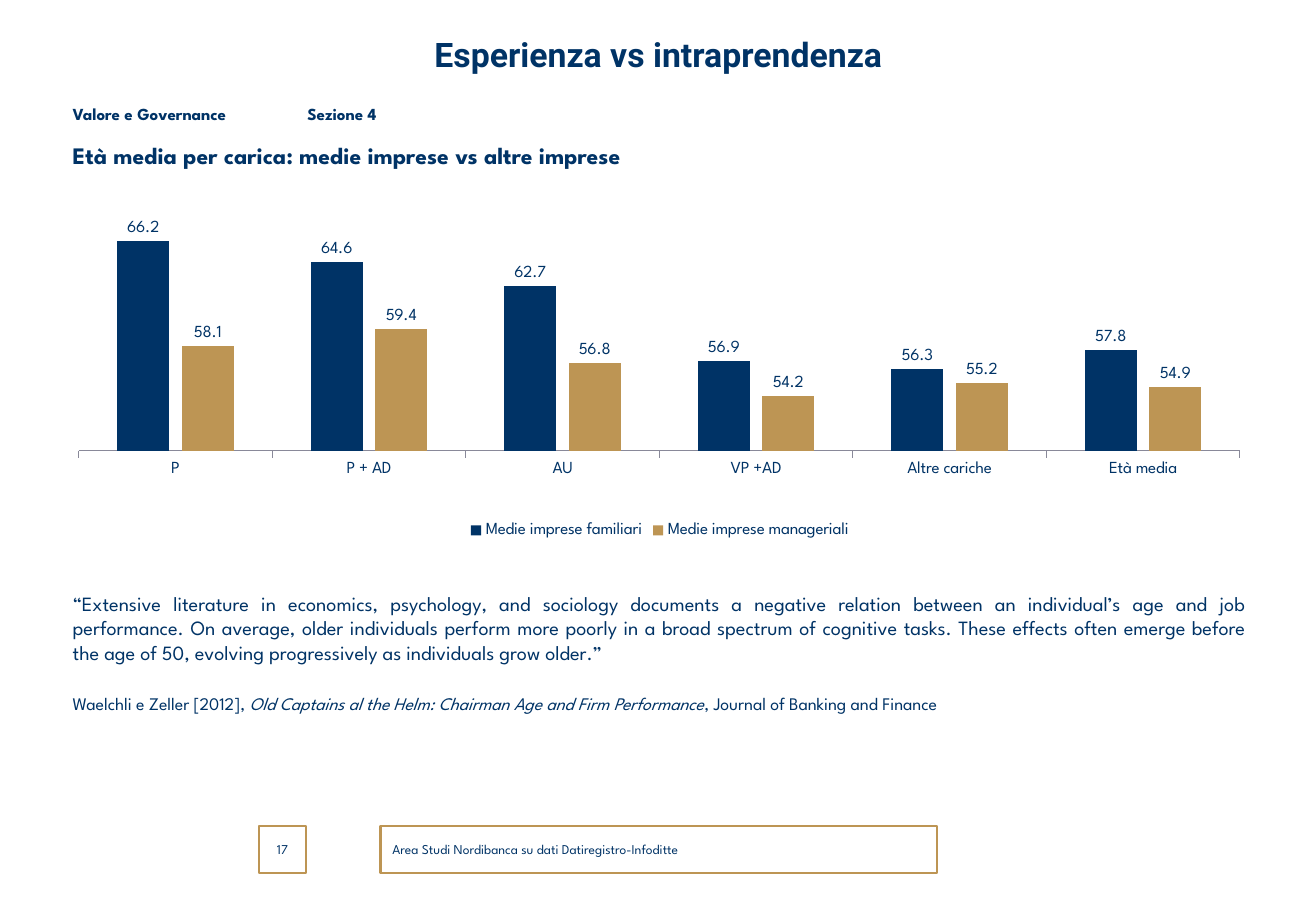
"""Build the slide comparing average age by office in family-run and managed firms."""
from lxml import etree
from pptx import Presentation
from pptx.chart.data import CategoryChartData
from pptx.dml.color import RGBColor
from pptx.enum.chart import XL_CHART_TYPE, XL_LABEL_POSITION, XL_LEGEND_POSITION, XL_TICK_LABEL_POSITION, XL_TICK_MARK
from pptx.enum.shapes import MSO_SHAPE
from pptx.enum.text import MSO_ANCHOR, PP_ALIGN
from pptx.oxml.ns import qn
from pptx.util import Pt

LEFT, CENTER, JUSTIFY = PP_ALIGN.LEFT, PP_ALIGN.CENTER, PP_ALIGN.JUSTIFY
TOP, MIDDLE = MSO_ANCHOR.TOP, MSO_ANCHOR.MIDDLE

THEME = {
    "navy": RGBColor.from_string("003366"),
    "gold": RGBColor.from_string("BD9554"),
    "axis": RGBColor.from_string("898999"),
    "heading_font": "Roboto", "body_font": "League Spartan",
    "title": 20, "subtitle": 14, "quote": 12, "citation": 10.5, "label": 10, "footer": 8,
}

TITLE = "Esperienza vs intraprendenza"
SECTION = "Valore e Governance\tSezione 4"
SUBTITLE = "Età media per carica: medie imprese vs altre imprese"
QUOTE = (
    "“Extensive literature in economics, psychology, and sociology documents a negative relation "
    "between an individual’s age and job performance. On average, older individuals perform more "
    "poorly in a broad spectrum of cognitive tasks. These effects often emerge before the age of 50, "
    "evolving progressively as individuals grow older.”"
)
CITATION = [
    ("Waelchli e Zeller [2012], ", False),
    ("Old Captains al the Helm: Chairman Age and Firm Performance", True),
    (", Journal of Banking and Finance", False),
]
PAGE_NUMBER = "17"
SOURCE_NOTE = "Area Studi Nordibanca su dati Datiregistro-Infoditte"

OFFICES = ["P", "P + AD", "AU", "VP +AD", "Altre cariche", "Età media"]
AVERAGE_AGES = [
    ("Medie imprese familiari", "navy", [66.2, 64.6, 62.7, 56.9, 56.3, 57.8]),
    ("Medie imprese manageriali", "gold", [58.1, 59.4, 56.8, 54.2, 55.2, 54.9]),
]

SLIDE_SIZE = (779.76, 540)
MARGIN = 36
HEADING_WIDTH, CONTENT_WIDTH = 708.5, 710
FOOTER_TOP, FOOTER_HEIGHT = 489.6, 28
SECTION_TAB = 139
CITATION_GAP = 17
PLOT_AREA = {"x": 0.015, "y": 0.051, "w": 0.969, "h": 0.68}


def apply(target, values):
    for name, value in values.items():
        setattr(target, name, value)


def style_font(font, size, **extra):
    apply(font, {"size": Pt(THEME[size]), "name": THEME["body_font"], **extra})
    font.color.rgb = THEME["navy"]


def write(paragraph, runs, size, align=LEFT, **extra):
    paragraph.alignment = align
    for text, italic in runs:
        run = paragraph.add_run()
        run.text = text
        style_font(run.font, size, italic=italic, **extra)


def set_frame(shape, anchor=TOP):
    apply(shape.text_frame, {"word_wrap": True, "vertical_anchor": anchor})
    return shape.text_frame.paragraphs[0]


def add_text(slide, box, anchor=TOP):
    shape = slide.shapes.add_textbox(*map(Pt, box))
    return shape.text_frame, set_frame(shape, anchor)


def add_footer_box(slide, left, width, text, align):
    frame_box = slide.shapes.add_shape(
        MSO_SHAPE.RECTANGLE, Pt(left), Pt(FOOTER_TOP), Pt(width), Pt(FOOTER_HEIGHT))
    frame_box.shadow.inherit = False
    frame_box.fill.background()
    frame_box.line.color.rgb = THEME["gold"]
    frame_box.line.width = Pt(1.5)
    write(set_frame(frame_box, MIDDLE), [(text, False)], "footer", align)


def fix_plot_area(chart):
    plot_area = chart._chartSpace.chart.plotArea
    for layout in plot_area.findall(qn("c:layout")):
        plot_area.remove(layout)
    layout = etree.Element(qn("c:layout"))
    manual = etree.SubElement(layout, qn("c:manualLayout"))
    settings = {"layoutTarget": "inner", "xMode": "edge", "yMode": "edge", **PLOT_AREA}
    for tag, value in settings.items():
        etree.SubElement(manual, qn(f"c:{tag}")).set("val", str(value))
    plot_area.insert(0, layout)


def add_age_chart(slide, box):
    ages = CategoryChartData(number_format="0.0")
    ages.categories = OFFICES
    for name, _, values in AVERAGE_AGES:
        ages.add_series(name, values)
    chart = slide.shapes.add_chart(XL_CHART_TYPE.COLUMN_CLUSTERED, *map(Pt, box), ages).chart
    apply(chart, {"has_title": False, "has_legend": True})
    style_font(chart.font, "label")
    apply(chart.legend, {"position": XL_LEGEND_POSITION.BOTTOM, "include_in_layout": False})
    apply(chart.value_axis, {"minimum_scale": 50, "maximum_scale": 68,
                             "has_major_gridlines": False, "visible": False})
    apply(chart.category_axis, {"major_tick_mark": XL_TICK_MARK.OUTSIDE,
                                "minor_tick_mark": XL_TICK_MARK.NONE,
                                "tick_label_position": XL_TICK_LABEL_POSITION.LOW})
    chart.category_axis.format.line.color.rgb = THEME["axis"]
    plot = chart.plots[0]
    apply(plot, {"gap_width": 150, "overlap": -25, "vary_by_categories": False,
                 "has_data_labels": True})
    apply(plot.data_labels, {"show_value": True, "position": XL_LABEL_POSITION.OUTSIDE_END,
                             "number_format": "0.0", "number_format_is_linked": False})
    style_font(plot.data_labels.font, "label")
    for series, (_, color, _) in zip(plot.series, AVERAGE_AGES):
        series.invert_if_negative = False
        series.format.fill.solid()
        series.format.fill.fore_color.rgb = THEME[color]
    fix_plot_area(chart)


def main():
    deck = Presentation()
    apply(deck, dict(zip(("slide_width", "slide_height"), map(Pt, SLIDE_SIZE))))
    slide = deck.slides.add_slide(deck.slide_layouts[6])

    _, title = add_text(slide, (MARGIN, 16.6, HEADING_WIDTH, 37.4))
    write(title, [(TITLE, False)], "title", CENTER, bold=True, name=THEME["heading_font"])

    _, section = add_text(slide, (MARGIN, 56.2, HEADING_WIDTH, 22.3), MIDDLE)
    tabs = etree.SubElement(section._p.get_or_add_pPr(), qn("a:tabLst"))
    etree.SubElement(tabs, qn("a:tab"), pos=str(Pt(SECTION_TAB)), algn="l")
    write(section, [(SECTION, False)], "label", bold=True)

    _, subtitle = add_text(slide, (MARGIN, 80, 643.7, 32.4))
    write(subtitle, [(SUBTITLE, False)], "subtitle", bold=True)

    add_age_chart(slide, (MARGIN, 118.8, CONTENT_WIDTH, 203))

    quote_frame, quote = add_text(slide, (MARGIN, 347, CONTENT_WIDTH, 81.4))
    write(quote, [(QUOTE, False)], "quote", JUSTIFY)
    citation = quote_frame.add_paragraph()
    citation.space_before = Pt(CITATION_GAP)
    write(citation, CITATION, "citation", JUSTIFY)

    add_footer_box(slide, 153.4, FOOTER_HEIGHT, PAGE_NUMBER, CENTER)
    add_footer_box(slide, 225.4, 329.8, SOURCE_NOTE, LEFT)
    deck.save("out.pptx")


if __name__ == "__main__":
    main()
